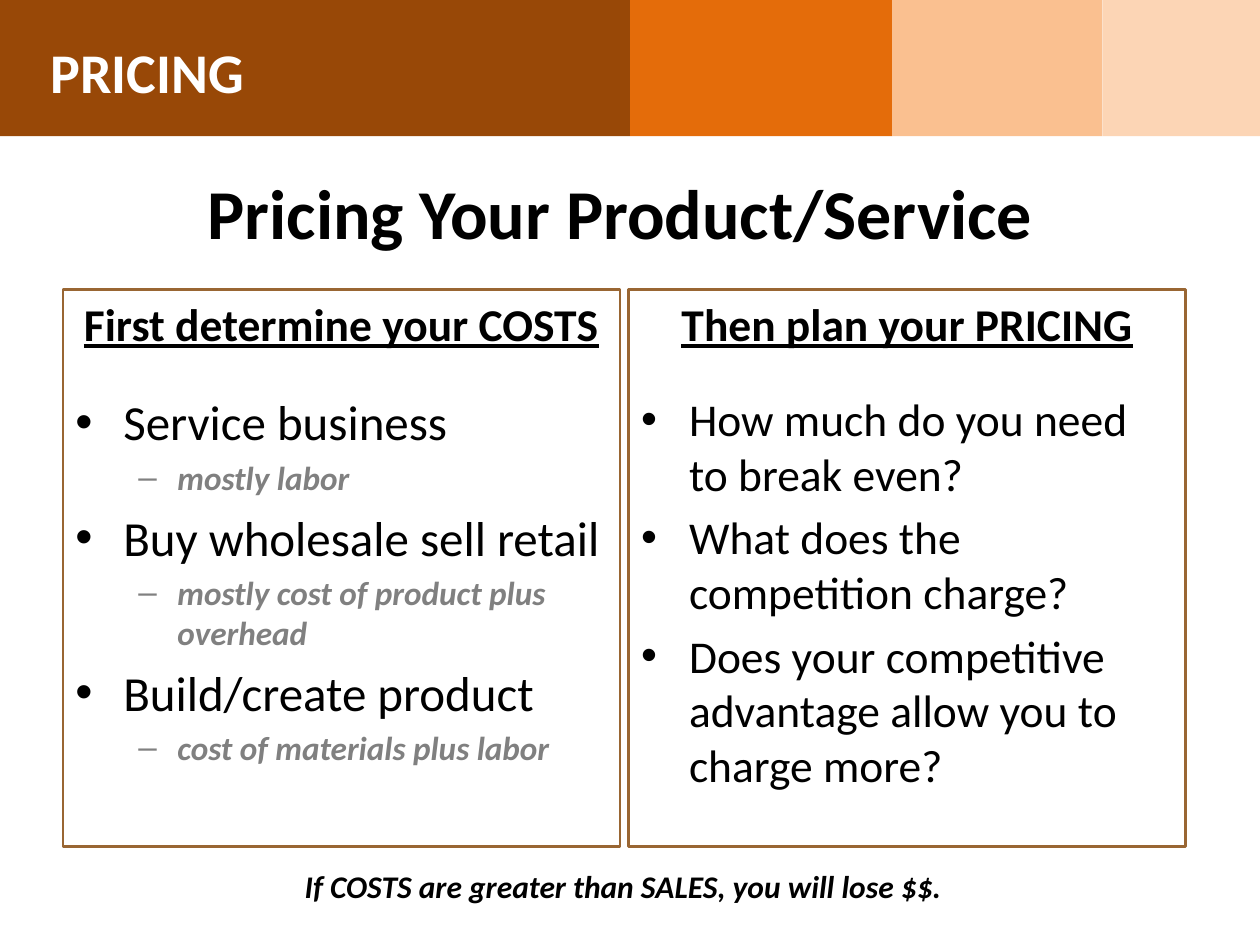
from dataclasses import dataclass

from lxml import etree
from pptx import Presentation
from pptx.dml.color import RGBColor
from pptx.enum.shapes import MSO_SHAPE
from pptx.enum.text import MSO_ANCHOR, MSO_AUTO_SIZE, PP_ALIGN
from pptx.oxml.ns import qn
from pptx.util import Emu, Inches, Pt

RECTANGLE = MSO_SHAPE.RECTANGLE
TOP, MIDDLE = MSO_ANCHOR.TOP, MSO_ANCHOR.MIDDLE
LEFT, CENTER = PP_ALIGN.LEFT, PP_ALIGN.CENTER
NO_AUTOFIT, FIT_SHAPE = MSO_AUTO_SIZE.NONE, MSO_AUTO_SIZE.SHAPE_TO_FIT_TEXT
TITLE_ONLY_LAYOUT = 5


@dataclass(frozen=True)
class Theme:
    font: str = "Calibri"
    bullet_font: str = "Arial"
    black: str = "000000"
    white: str = "FFFFFF"
    gray: str = "808080"
    frame: str = "996633"
    bands: tuple[str, ...] = ("984807", "E46C0A", "FAC090", "FCD5B5")
    title_size: int = 40
    section_size: int = 32
    cost_size: int = 28
    heading_size: int = 26
    detail_size: int = 19
    footer_size: int = 18


THEME = Theme()


@dataclass(frozen=True)
class Style:
    size: int
    color: str = THEME.black
    bold: bool = False
    italic: bool = False
    underline: bool = False
    align: PP_ALIGN = LEFT
    bullet: str = ""
    level: int = 0
    margin: float = 0
    hanging: float = 0
    before: float = 0
    after: float = 0


TITLE = Style(THEME.title_size, bold=True, align=CENTER)
SECTION = Style(THEME.section_size, THEME.white, bold=True)
FOOTER = Style(THEME.footer_size, bold=True, italic=True)
HEADING = Style(THEME.heading_size, bold=True, underline=True, align=CENTER, after=18)
COST = Style(THEME.cost_size, bullet="•", margin=0.38, hanging=0.38, before=5.6)
QUESTION = Style(THEME.heading_size, bullet="•", margin=0.38, hanging=0.38, before=5.2)
DETAIL = Style(THEME.detail_size, THEME.gray, bold=True, italic=True, bullet="–",
               level=1, margin=0.81, hanging=0.31, before=3.8)


@dataclass(frozen=True)
class Line:
    text: str
    style: Style


@dataclass(frozen=True)
class Panel:
    left: float
    lines: tuple[Line, ...]


PANEL_TOP, PANEL_SIDE = 2.3, 4.42
PANELS = (
    Panel(0.5, (
        Line("First determine your COSTS", HEADING),
        Line("Service business", COST),
        Line("mostly labor", DETAIL),
        Line("Buy wholesale sell retail", COST),
        Line("mostly cost of product plus overhead", DETAIL),
        Line("Build/create product", COST),
        Line("cost of materials plus labor", DETAIL),
    )),
    Panel(4.99, (
        Line("Then plan your PRICING", HEADING),
        Line("How much do you need to break even?", QUESTION),
        Line("What does the competition charge?", QUESTION),
        Line("Does your competitive advantage allow you to charge more?", QUESTION),
    )),
)
BAND_EDGES = (-0.04, 5, 7.08, 8.75, 10)
BAND_HEIGHT = 1.08


def set_attributes(target, values: dict) -> None:
    for name, value in values.items():
        setattr(target, name, value)


def format_bullet(paragraph, style: Style) -> None:
    """Set the hanging indent and bullet, which python-pptx does not expose."""
    properties = paragraph._p.get_or_add_pPr()
    properties.set("marL", str(int(Inches(style.margin))))
    properties.set("indent", str(int(Inches(-style.hanging))))
    if style.bullet:
        etree.SubElement(properties, qn("a:buFont"), typeface=THEME.bullet_font)
        etree.SubElement(properties, qn("a:buChar"), char=style.bullet)
    else:
        etree.SubElement(properties, qn("a:buNone"))


def write_lines(text_frame, lines: tuple[Line, ...], **frame_format) -> None:
    set_attributes(text_frame, {"word_wrap": True, "vertical_anchor": TOP, **frame_format})
    for index, line in enumerate(lines):
        paragraph = text_frame.add_paragraph() if index else text_frame.paragraphs[0]
        style = line.style
        set_attributes(paragraph, {
            "alignment": style.align, "level": style.level,
            "space_before": Pt(style.before), "space_after": Pt(style.after),
        })
        format_bullet(paragraph, style)
        run = paragraph.add_run()
        run.text = line.text
        set_attributes(run.font, {
            "name": THEME.font, "size": Pt(style.size), "bold": style.bold,
            "italic": style.italic, "underline": style.underline,
        })
        run.font.color.rgb = RGBColor.from_string(style.color)


def add_rectangle(slide, left: float, top: float, width: float, height: float,
                  fill: str = "", line: str = ""):
    shape = slide.shapes.add_shape(
        RECTANGLE, Inches(left), Inches(top), Inches(width), Inches(height))
    shape.shadow.inherit = False
    if fill:
        shape.fill.solid()
        shape.fill.fore_color.rgb = RGBColor.from_string(fill)
    else:
        shape.fill.background()
    if line:
        shape.line.color.rgb = RGBColor.from_string(line)
        shape.line.width = Pt(1.5)
    else:
        shape.line.fill.background()
    return shape


def add_title(slide) -> None:
    title = slide.shapes.title
    set_attributes(title, {"left": Inches(0.42), "top": Inches(1.05),
                           "width": Inches(9), "height": Inches(1.25)})
    write_lines(title.text_frame, (Line("Pricing Your Product/Service", TITLE),),
                vertical_anchor=MIDDLE, auto_size=NO_AUTOFIT)


def add_panel(slide, panel: Panel) -> None:
    shape = add_rectangle(slide, panel.left, PANEL_TOP, PANEL_SIDE, PANEL_SIDE,
                          line=THEME.frame)
    write_lines(shape.text_frame, panel.lines)


def add_footer(slide) -> None:
    box = slide.shapes.add_textbox(Inches(2.32), Inches(6.83), Inches(5.31), Inches(0.4))
    write_lines(box.text_frame,
                (Line("If COSTS are greater than SALES, you will lose $$.", FOOTER),),
                word_wrap=False, auto_size=FIT_SHAPE)


def add_header(slide) -> None:
    bands = [add_rectangle(slide, left, 0, right - left, BAND_HEIGHT, fill=color)
             for left, right, color in zip(BAND_EDGES, BAND_EDGES[1:], THEME.bands)]
    write_lines(bands[0].text_frame, (Line("PRICING", SECTION),), vertical_anchor=MIDDLE,
                margin_left=Inches(0.44), margin_top=Inches(0.09))


def main() -> None:
    presentation = Presentation()
    set_attributes(presentation, {"slide_width": Inches(10), "slide_height": Emu(Inches(7.5))})
    slide = presentation.slides.add_slide(presentation.slide_layouts[TITLE_ONLY_LAYOUT])
    add_title(slide)
    for panel in PANELS:
        add_panel(slide, panel)
    add_footer(slide)
    add_header(slide)
    presentation.save("out.pptx")


if __name__ == "__main__":
    main()
